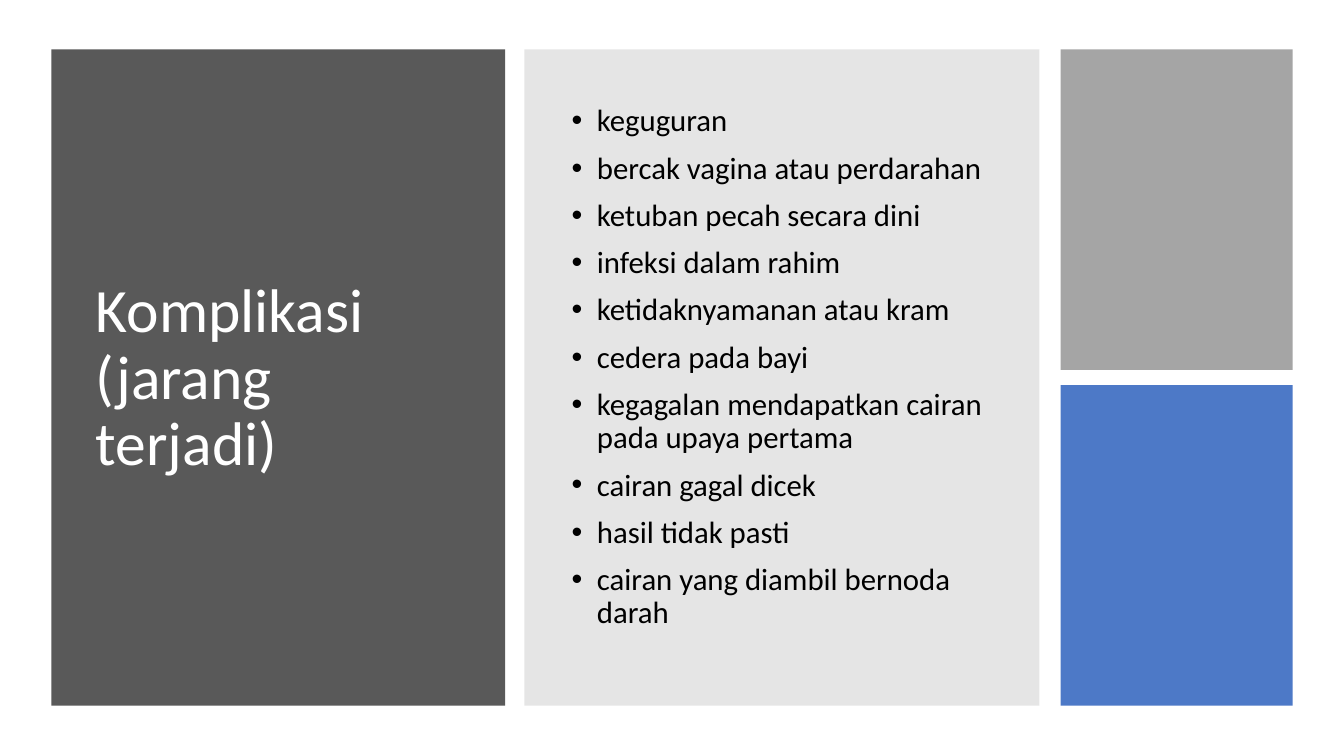
from lxml.etree import SubElement
from pptx import Presentation
from pptx.dml.color import RGBColor
from pptx.enum.shapes import MSO_SHAPE
from pptx.enum.text import MSO_ANCHOR, MSO_AUTO_SIZE, PP_ALIGN
from pptx.oxml.ns import qn
from pptx.util import Inches, Pt

ITEMS = [
    "keguguran",
    "bercak vagina atau perdarahan",
    "ketuban pecah secara dini",
    "infeksi dalam rahim",
    "ketidaknyamanan atau kram",
    "cedera pada bayi",
    "kegagalan mendapatkan cairan pada upaya pertama",
    "cairan gagal dicek",
    "hasil tidak pasti",
    "cairan yang diambil bernoda darah",
]


def paint(color, value):
    color.rgb = RGBColor.from_string(value)


def assign(target, values):
    for name, value in values.items():
        setattr(target, name, value)


class Deck:
    face = "Calibri"
    frame = {
        "word_wrap": True,
        "auto_size": MSO_AUTO_SIZE.NONE,
        "vertical_anchor": MSO_ANCHOR.MIDDLE,
    }
    para = {"alignment": PP_ALIGN.LEFT, "line_spacing": 0.9}

    def __init__(self):
        self.show = Presentation()
        assign(self.show, {"slide_width": Inches(13.33), "slide_height": Inches(7.5)})
        self.slide = self.show.slides.add_slide(self.show.slide_layouts[1])

    def panel(self, box, fill, alpha=100):
        shape = self.slide.shapes.add_shape(MSO_SHAPE.RECTANGLE, *map(Inches, box))
        shape.shadow.inherit = False
        shape.line.fill.background()
        shape.fill.solid()
        paint(shape.fill.fore_color, fill)
        if alpha < 100:
            color = next(shape.fill._xPr.iter(qn("a:srgbClr")))
            SubElement(color, qn("a:alpha"), val=str(alpha * 1000))

    def place(self, holder, box, lines, size, color, gap=0, bullet=False):
        tree = self.slide.shapes._spTree
        tree.append(holder._element)
        assign(holder, dict(zip(("left", "top", "width", "height"), map(Inches, box))))
        text = holder.text_frame
        text.text = "\n".join(lines)
        assign(text, self.frame)
        for rank, line in enumerate(text.paragraphs):
            assign(line, self.para | {"space_before": Pt(gap if rank else 0)})
            if bullet:
                props = line._p.get_or_add_pPr()
                props.set("marL", str(Inches(0.25)))
                props.set("indent", str(Inches(-0.25)))
                SubElement(props, qn("a:buChar"), char="•")
            assign(line.font, {"name": self.face, "size": Pt(size)})
            paint(line.font.color, color)

    def title(self, box, text, size, color):
        self.place(self.slide.shapes.title, box, [text], size, color)

    def bullets(self, box, lines, size, color):
        self.place(self.slide.placeholders[1], box, lines, size, color, 10, True)

    def save(self):
        self.show.save("out.pptx")


def main():
    top, tall, half, gap = 0.49, 6.51, 3.18, 0.15
    deck = Deck()
    deck.panel((0.51, top, 4.5, tall), "595959")
    deck.title((0.85, 0.83, 3.84, 5.87), "Komplikasi (jarang terjadi)", 44, "FFFFFF")
    deck.panel((5.2, top, 5.11, tall), "808080", 20)
    deck.bullets((5.57, 0.95, 4.42, 5.4), ITEMS, 22, "000000")
    for row, (fill, alpha) in enumerate([("A5A5A5", 100), ("4472C4", 95)]):
        deck.panel((10.52, top + row * (half + gap), 2.3, half), fill, alpha)
    deck.save()


if __name__ == "__main__":
    main()
